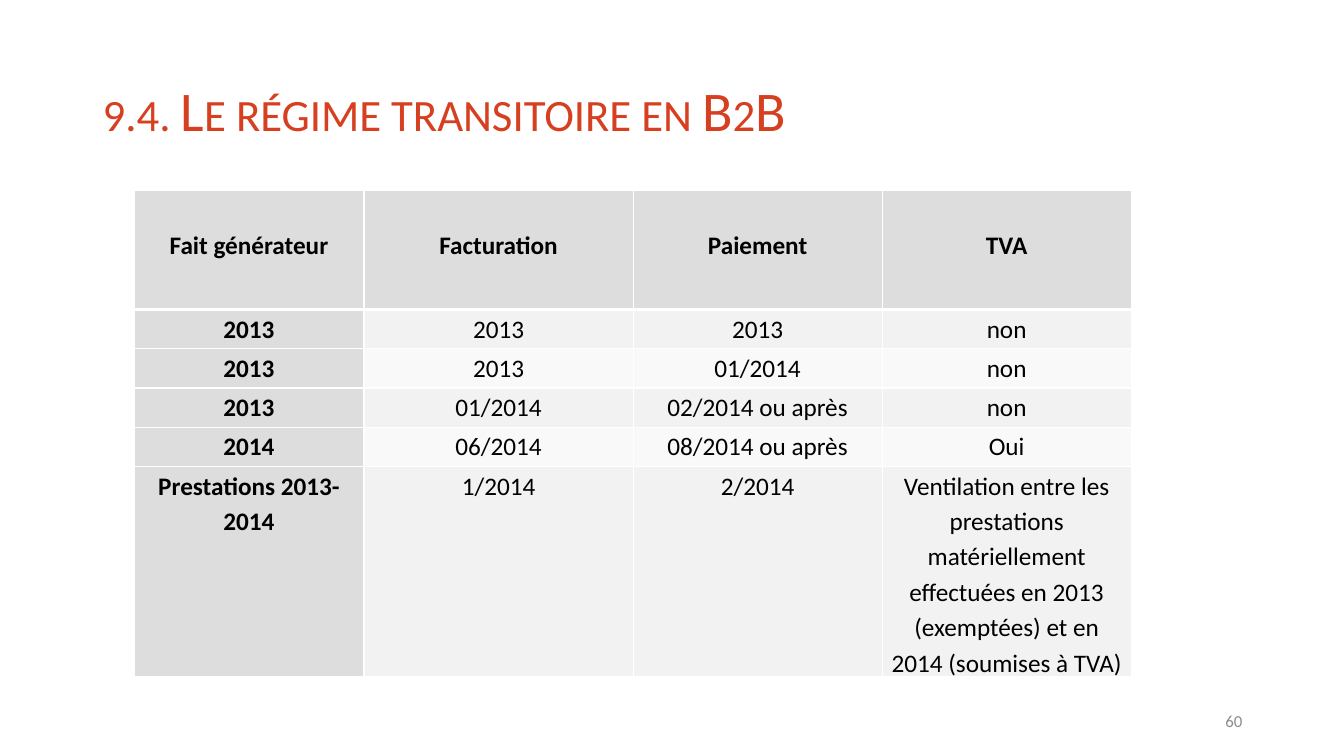
from dataclasses import dataclass

from lxml.etree import SubElement
from pptx import Presentation
from pptx.dml.color import RGBColor
from pptx.enum.text import MSO_ANCHOR as Anchor, PP_ALIGN as Align
from pptx.oxml.ns import qn
from pptx.util import Inches, Pt


@dataclass(frozen=True)
class Theme:
    font: str = "Calibri"
    title_color: str = "D64020"
    number_color: str = "8C8C8C"
    text_color: str = "000000"
    head_fill: str = "DDDDDD"
    band_fills: tuple = ("F2F2F2", "F9F9F9")
    border_color: str = "FFFFFF"
    title_size: int = 40
    table_size: int = 18
    number_size: int = 12
    thin: int = 1
    thick: int = 3


class SlideBuilder:
    def __init__(self, deck, theme):
        self.theme = theme
        self.slide = deck.slides.add_slide(deck.slide_layouts[6])

    def add_span(self, para, text, size, color, bold=False):
        span = para.add_run()
        span.text = text
        span.font.name = self.theme.font
        span.font.size = Pt(size)
        span.font.bold = bold
        span.font.color.rgb = RGBColor.from_string(color)
        return span

    def add_text(self, text, place, size, color, align=Align.LEFT, spacing=1.0):
        box = self.slide.shapes.add_textbox(*map(Inches, place))
        frame = box.text_frame
        frame.word_wrap = True
        frame.vertical_anchor = Anchor.MIDDLE
        para = frame.paragraphs[0]
        para.alignment = align
        para.line_spacing = spacing
        return self.add_span(para, text, size, color)

    def add_borders(self, cell, widths):
        properties = cell._tc.get_or_add_tcPr()
        for side, width in zip("LRTB", widths):
            line = SubElement(properties, qn(f"a:ln{side}"), w=str(Pt(width)))
            fill = SubElement(line, qn("a:solidFill"))
            SubElement(fill, qn("a:srgbClr"), val=self.theme.border_color)

    def fill_cell(self, cell, text, row, column):
        theme = self.theme
        is_head = row == 0 or column == 0
        # A thick rule separates the header row from the body
        top = theme.thick if row == 1 else theme.thin
        bottom = theme.thick if row == 0 else theme.thin
        self.add_borders(cell, (theme.thin, theme.thin, top, bottom))
        cell.fill.solid()
        color = theme.head_fill if is_head else theme.band_fills[(row - 1) % 2]
        cell.fill.fore_color.rgb = RGBColor.from_string(color)
        cell.margin_left = cell.margin_right = Inches(0.07)
        cell.margin_top = Inches(0.35 if row == 0 else 0)
        cell.margin_bottom = 0
        cell.vertical_anchor = Anchor.TOP
        para = cell.text_frame.paragraphs[0]
        para.alignment = Align.CENTER
        para.line_spacing = 1.15
        self.add_span(para, text, theme.table_size, theme.text_color, is_head)

    def add_table(self, rows, left, top, widths, heights):
        frame = self.slide.shapes.add_table(
            len(rows), len(widths), Inches(left), Inches(top),
            Inches(sum(widths)), Inches(sum(heights)))
        table = frame.table
        table.horz_banding = False
        table.first_row = False
        for column, width in zip(table.columns, widths):
            column.width = Inches(width)
        for row, height in zip(table.rows, heights):
            row.height = Inches(height)
        for row_index, texts in enumerate(rows):
            for column_index, text in enumerate(texts):
                cell = table.cell(row_index, column_index)
                self.fill_cell(cell, text, row_index, column_index)


REGIME_ROWS = [
    ("Fait générateur", "Facturation", "Paiement", "TVA"),
    ("2013", "2013", "2013", "non"),
    ("2013", "2013", "01/2014", "non"),
    ("2013", "01/2014", "02/2014 ou après", "non"),
    ("2014", "06/2014", "08/2014 ou après", "Oui"),
    ("Prestations 2013-2014", "1/2014", "2/2014",
     "Ventilation entre les prestations matériellement effectuées en 2013 "
     "(exemptées) et en 2014 (soumises à TVA)"),
]


def main():
    deck = Presentation()
    deck.slide_width = Inches(13.33)
    deck.slide_height = Inches(7.5)
    theme = Theme()
    page = SlideBuilder(deck, theme)

    # Title in small capitals
    title = page.add_text("9.4. Le régime transitoire en B2B", (0.92, 0.4, 11.5, 1.45),
                          theme.title_size, theme.title_color, spacing=0.9)
    title.font._element.set("cap", "small")

    # Transitional regime table
    page.add_table(REGIME_ROWS, 1.33, 1.89, (2.28, 2.67, 2.47, 2.47),
                   (1.18, *[0.39] * 4, 2.08))

    # Page number
    page.add_text("60", (9.42, 6.95, 3, 0.4), theme.number_size,
                  theme.number_color, Align.RIGHT)

    deck.save("out.pptx")


if __name__ == "__main__":
    main()
